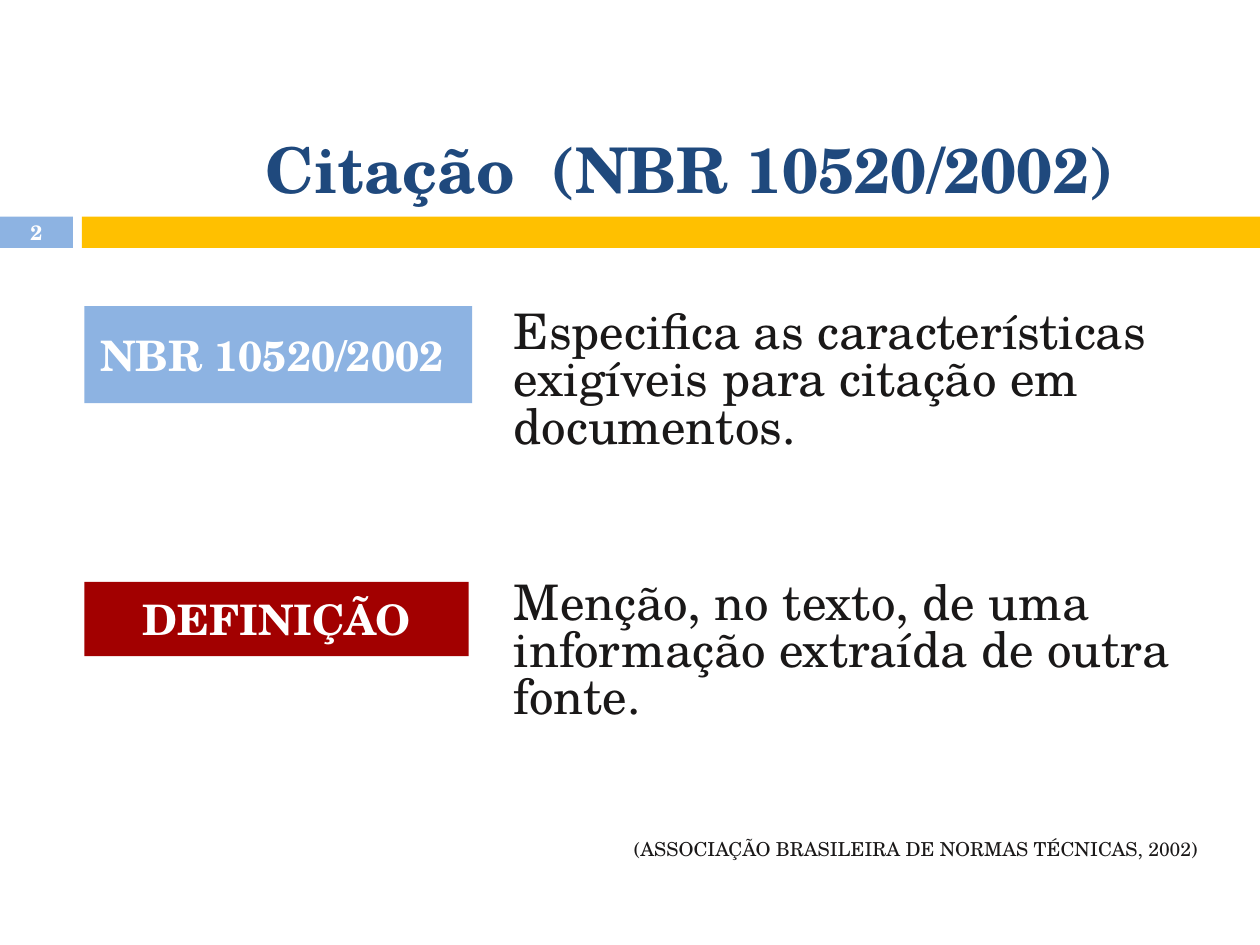
from pptx import Presentation
from pptx.dml.color import RGBColor
from pptx.enum.shapes import MSO_SHAPE as Shape
from pptx.enum.text import MSO_ANCHOR as Anchor, PP_ALIGN as Align
from pptx.util import Cm, Pt

FONT = "TeX Gyre Schola"
LIGHT_BLUE = RGBColor(0x8D, 0xB3, 0xE2)
NAVY = RGBColor(0x1F, 0x49, 0x7D)
GOLD = RGBColor(0xFF, 0xC0, 0x00)
RED = RGBColor(0xA2, 0x00, 0x00)
INK = RGBColor(0x1A, 0x18, 0x18)
WHITE = RGBColor(0xFF, 0xFF, 0xFF)

BAND_TOP, BAND_HEIGHT = 4.37, 0.63
LABEL_LEFT = 1.7
CONTENT_TOP = 6.17


def add_bar(page, left, top, width, height, color):
    bar = page.shapes.add_shape(
        Shape.RECTANGLE, Cm(left), Cm(top), Cm(width), Cm(height))
    bar.shadow.inherit = False
    bar.fill.solid()
    bar.fill.fore_color.rgb = color
    bar.line.fill.background()
    return bar


def add_text_box(page, left, top, width, height):
    return page.shapes.add_textbox(Cm(left), Cm(top), Cm(width), Cm(height))


def write(box, text, size, color, bold=False, align=Align.CENTER,
          anchor=Anchor.MIDDLE, line_spacing=1.0, gap=0):
    """Fill a shape with text, one paragraph a line, gap points apart."""
    frame = box.text_frame
    frame.word_wrap = True
    frame.vertical_anchor = anchor
    frame.text = text
    for number, para in enumerate(frame.paragraphs):
        para.alignment = align
        para.line_spacing = line_spacing
        if number:
            para.space_before = Pt(gap)
        for span in para.runs:
            span.font.name = FONT
            span.font.size = Pt(size)
            span.font.bold = bold
            span.font.color.rgb = color


def add_header(page):
    title = add_text_box(page, 3.56, 2.51, 20.68, 1.78)
    write(title, "Citação  (NBR 10520/2002)", 36, NAVY, bold=True)
    number = add_bar(page, 0, BAND_TOP, 1.47, BAND_HEIGHT, LIGHT_BLUE)
    write(number, "2", 11.9, WHITE, bold=True)
    add_bar(page, 1.65, BAND_TOP, 23.75, BAND_HEIGHT, GOLD)


def add_labels(page):
    standard = add_bar(page, LABEL_LEFT, CONTENT_TOP, 7.82, 1.96, LIGHT_BLUE)
    write(standard, "NBR 10520/2002", 24, WHITE, bold=True)
    standard.text_frame.margin_right = Cm(0.5)
    definition = add_bar(page, LABEL_LEFT, 11.73, 7.75, 1.5, RED)
    write(definition, "DEFINIÇÃO", 24, WHITE, bold=True)


def add_explanations(page):
    body = add_text_box(page, 10.11, CONTENT_TOP, 14.02, 11.56)
    write(body,
          "Especifica as características exigíveis para citação em documentos.\n"
          "Menção, no texto, de uma informação extraída de outra fonte.",
          28, INK, align=Align.LEFT, anchor=Anchor.TOP,
          line_spacing=0.8, gap=74)


def add_source(page):
    source = add_text_box(page, 1.19, 16.66, 23.22, 0.81)
    write(source, "(ASSOCIAÇÃO BRASILEIRA DE NORMAS TÉCNICAS, 2002)", 11, INK,
          align=Align.RIGHT, anchor=Anchor.TOP, line_spacing=1.2)


def main():
    deck = Presentation()
    deck.slide_width, deck.slide_height = Cm(25.4), Cm(19.05)
    page = deck.slides.add_slide(deck.slide_layouts[6])
    add_header(page)
    add_explanations(page)
    add_labels(page)
    add_source(page)
    deck.save("out.pptx")


if __name__ == "__main__":
    main()
